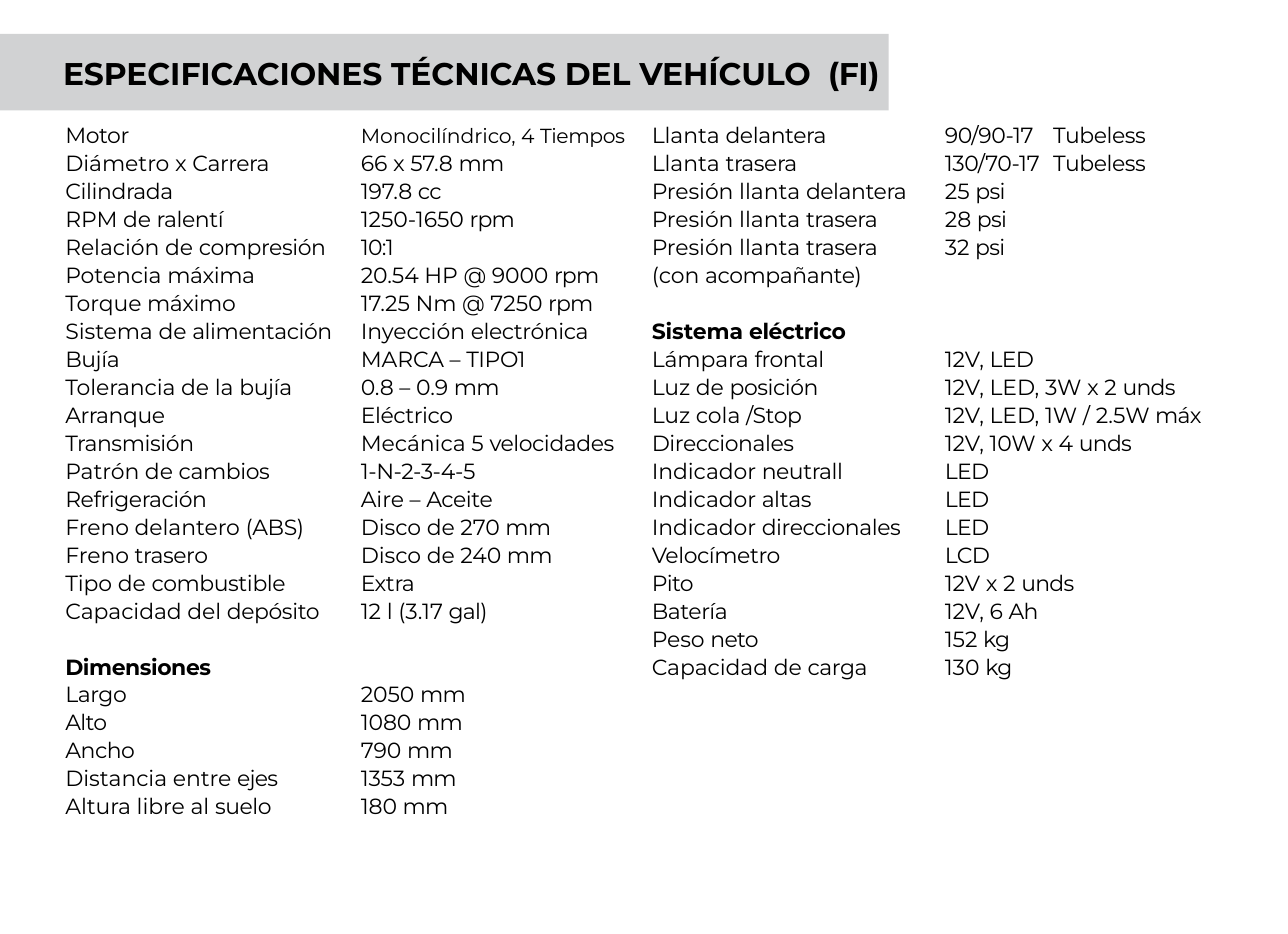
from itertools import zip_longest

from pptx import Presentation
from pptx.dml.color import RGBColor
from pptx.enum.shapes import MSO_SHAPE
from pptx.oxml import parse_xml
from pptx.oxml.ns import nsdecls
from pptx.util import Inches, Pt

BLACK = RGBColor(0x00, 0x00, 0x00)
GREY = RGBColor(0xD1, 0xD2, 0xD3)
FONT = "Montserrat"

TITLE = "ESPECIFICACIONES TÉCNICAS DEL VEHÍCULO  (FI)"
HEADINGS = {"Sistema eléctrico", "Dimensiones"}
SMALL_TEXTS = {"Monocilíndrico, 4 Tiempos"}
COLUMN_WIDTHS = [1.29, 1.29, 1.28, 1.26]
INDENTS = [0.03, 0.05, 0.05, 0.07]
TYRE_TAB = 0.48

LEFT_SPECS = [
    ("Motor", "Monocilíndrico, 4 Tiempos"),
    ("Diámetro x Carrera", "66 x 57.8 mm"),
    ("Cilindrada", "197.8 cc"),
    ("RPM de ralentí", "1250-1650 rpm"),
    ("Relación de compresión", "10:1"),
    ("Potencia máxima", "20.54 HP @ 9000 rpm"),
    ("Torque máximo", "17.25 Nm @ 7250 rpm"),
    ("Sistema de alimentación", "Inyección electrónica"),
    ("Bujía", "MARCA – TIPO1"),
    ("Tolerancia de la bujía", "0.8 – 0.9 mm"),
    ("Arranque", "Eléctrico"),
    ("Transmisión", "Mecánica 5 velocidades"),
    ("Patrón de cambios", "1-N-2-3-4-5"),
    ("Refrigeración", "Aire – Aceite"),
    ("Freno delantero (ABS)", "Disco de 270 mm"),
    ("Freno trasero", "Disco de 240 mm"),
    ("Tipo de combustible", "Extra"),
    ("Capacidad del depósito", "12 l (3.17 gal)"),
    ("", ""),
    ("Dimensiones", ""),
    ("Largo", "2050 mm"),
    ("Alto", "1080 mm"),
    ("Ancho", "790 mm"),
    ("Distancia entre ejes", "1353 mm"),
    ("Altura libre al suelo", "180 mm"),
]
RIGHT_SPECS = [
    ("Llanta delantera", "90/90-17\tTubeless"),
    ("Llanta trasera", "130/70-17\tTubeless"),
    ("Presión llanta delantera", "25 psi"),
    ("Presión llanta trasera", "28 psi"),
    ("Presión llanta trasera", "32 psi"),
    ("(con acompañante)", ""),
    ("", ""),
    ("Sistema eléctrico", ""),
    ("Lámpara frontal", "12V, LED"),
    ("Luz de posición", "12V, LED, 3W x 2 unds"),
    ("Luz cola /Stop", "12V, LED, 1W / 2.5W máx"),
    ("Direccionales", "12V, 10W x 4 unds"),
    ("Indicador neutrall", "LED"),
    ("Indicador altas", "LED"),
    ("Indicador direccionales", "LED"),
    ("Velocímetro", "LCD"),
    ("Pito", "12V x 2 unds"),
    ("Batería", "12V, 6 Ah"),
    ("Peso neto", "152 kg"),
    ("Capacidad de carga", "130 kg"),
]


def write_text(tf, text, size=7, bold=False, line=None, tab=None):
    p = tf.paragraphs[0]
    if line:
        p.line_spacing = Pt(line)
    if tab:
        p._p.get_or_add_pPr().append(parse_xml(
            f'<a:tabLst {nsdecls("a")}><a:tab pos="{Inches(tab)}" algn="l"/></a:tabLst>'))
    head, gap, tail = text.rpartition(" ")
    tail_spacing = -20 if len(tail) <= 4 and not bold else -10
    for part, spacing in ((head + gap, 0), (tail, tail_spacing)):
        if part:
            r = p.add_run()
            r.text = part
            r.font.name = FONT
            r.font.size = Pt(size)
            r.font.bold = bold
            r.font.color.rgb = BLACK
            r.font._element.set("spc", str(spacing))
    if not text:
        p._p.get_or_add_endParaRPr().set("sz", str(size * 100))


def add_header(slide, left, top, width, height):
    sp = slide.shapes.add_shape(
        MSO_SHAPE.RECTANGLE, Inches(left), Inches(top), Inches(width), Inches(height))
    sp.shadow.inherit = False
    sp.fill.solid()
    sp.fill.fore_color.rgb = GREY
    sp.line.fill.background()
    box = slide.shapes.add_textbox(
        Inches(left + 0.28), Inches(top + 0.07), Inches(4.83), Inches(0.18))
    tf = box.text_frame
    tf.word_wrap = True
    tf.margin_left = tf.margin_right = tf.margin_bottom = 0
    tf.margin_top = Inches(0.02)
    write_text(tf, TITLE, size=10, bold=True)


def add_spec_table(slide, left, top, width, height):
    rows = list(zip_longest(LEFT_SPECS, RIGHT_SPECS, fillvalue=("", "")))
    frame = slide.shapes.add_table(
        len(rows), len(COLUMN_WIDTHS),
        Inches(left), Inches(top), Inches(width), Inches(height))
    table = frame.table
    table.first_row = table.horz_banding = False
    for column, column_width in zip(table.columns, COLUMN_WIDTHS):
        column.width = Inches(column_width)
    for i, (left_pair, right_pair) in enumerate(rows):
        table.rows[i].height = Inches(height / len(rows))
        for j, text in enumerate(left_pair + right_pair):
            cell = table.cell(i, j)
            cell.fill.background()
            cell.margin_left = Inches(INDENTS[j])
            cell.margin_right = cell.margin_top = cell.margin_bottom = 0
            write_text(cell.text_frame, text,
                       size=6.5 if text in SMALL_TEXTS else 7,
                       bold=text in HEADINGS, line=8,
                       tab=TYRE_TAB if "\t" in text else None)


def main():
    prs = Presentation()
    prs.slide_width = Inches(5.71)
    prs.slide_height = Inches(4.14)
    slide = prs.slides.add_slide(prs.slide_layouts[6])
    add_header(slide, 0, 0.15, 3.94, 0.34)
    add_spec_table(slide, 0.26, 0.55, sum(COLUMN_WIDTHS), 3.11)
    prs.save("out.pptx")


if __name__ == "__main__":
    main()
